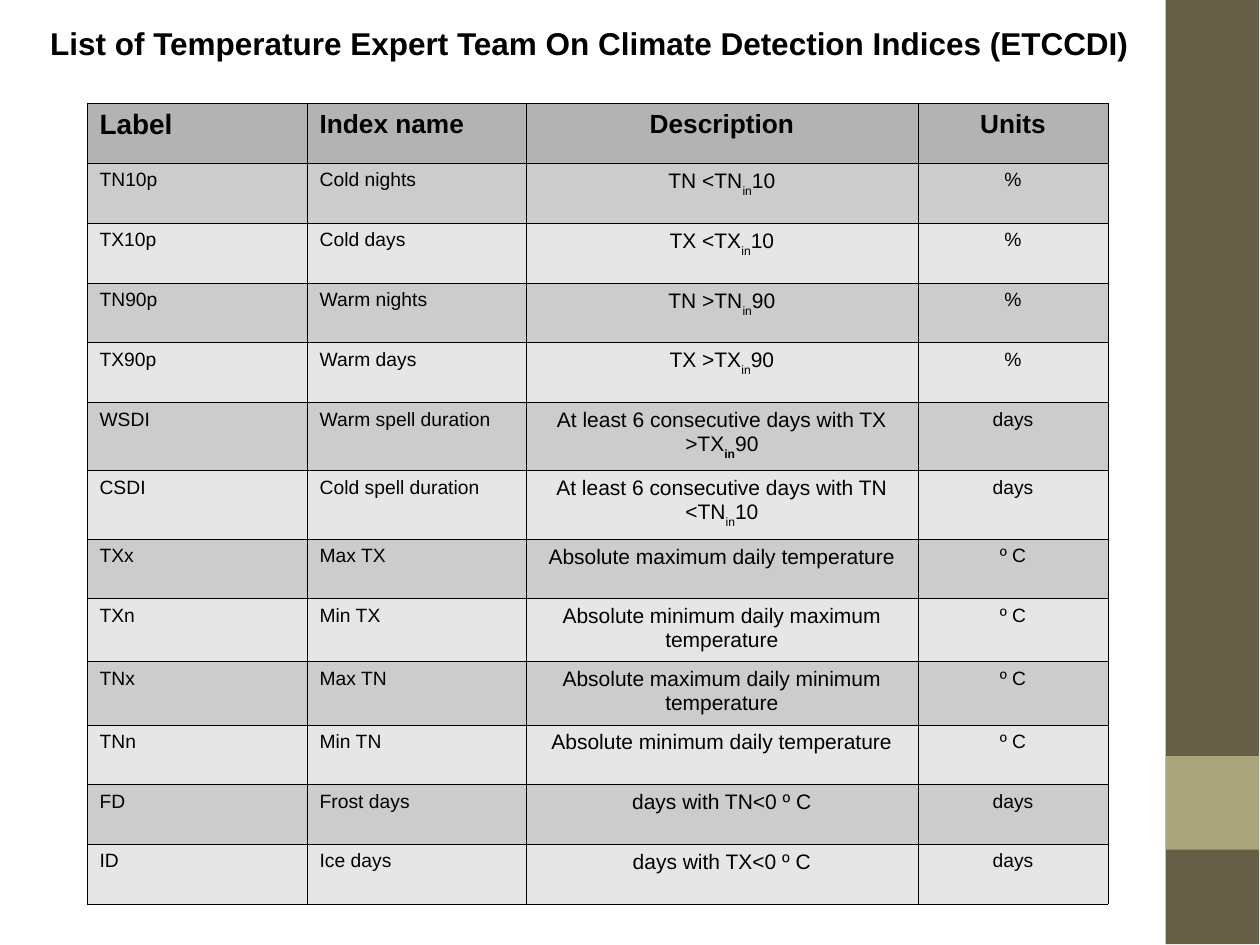
import pptx
import pptx.dml.color
import pptx.enum.shapes
import pptx.enum.text
import pptx.oxml
import pptx.oxml.ns
import pptx.util

Pt = pptx.util.Pt
ALIGN = pptx.enum.text.PP_ALIGN

TITLE = "List of Temperature Expert Team On Climate Detection Indices (ETCCDI)"
HEADER = ("Label", "Index name", "Description", "Units")
INDICES = [
    ("TN10p", "Cold nights", "TN <TN|in|10", "%"),
    ("ΤΧ10p", "Cold days", "TX <TX|in|10", "%"),
    ("TN90p", "Warm nights", "TN >TN|in|90", "%"),
    ("TX90p", "Warm days", "TX >TX|in|90", "%"),
    ("WSDI", "Warm spell duration", "At least 6 consecutive days with TX >TX|in|90", "days"),
    ("CSDI", "Cold spell duration", "At least 6 consecutive days with TN <TN|in|10", "days"),
    ("TXx", "Max TX", "Absolute maximum daily temperature", "º C"),
    ("TXn", "Min TX", "Absolute minimum daily maximum temperature", "º C"),
    ("TNx", "Max TN", "Absolute maximum daily minimum temperature", "º C"),
    ("TNn", "Min TN", "Absolute minimum daily temperature", "º C"),
    ("FD", "Frost days", "days with TN<0 º C", "days"),
    ("ID", "Ice days", "days with TX<0 º C", "days"),
]
BOLD_SUBSCRIPT = "WSDI"
COLUMN_WIDTHS = (125.8, 124.9, 224.3, 108.4)
COLUMN_ALIGN = (ALIGN.LEFT, ALIGN.LEFT, ALIGN.CENTER, ALIGN.CENTER)
HEADER_SIZES = (16, 15, 15, 15)
BODY_SIZES = (11, 11, 12, 11)
ROW_HEIGHT = 34.2
HEADER_FILL, BAND_FILLS = "B3B3B3", ("CCCCCC", "E6E6E6")
SIDE_BARS = [(0, 539.5, "675E47"), (432, 53.5, "A9A57C")]


def rgb(value):
    """Turn a hex string into a colour."""
    return pptx.dml.color.RGBColor.from_string(value)


def style_run(r, size, bold):
    """Set the font of one run."""
    r.font.name = "Arial"
    r.font.size = Pt(size)
    r.font.bold = bold
    r.font.color.rgb = rgb("000000")


def add_bar(s, top, height, fill):
    """Draw one block of the side band."""
    sp = s.shapes.add_shape(pptx.enum.shapes.MSO_SHAPE.RECTANGLE,
                            Pt(666), Pt(top), Pt(53.5), Pt(height))
    sp.shadow.inherit = False
    sp.fill.solid()
    sp.fill.fore_color.rgb = rgb(fill)
    sp.line.fill.background()


def add_borders(cell):
    """Give a cell thin black lines on all sides."""
    tcPr = cell._tc.get_or_add_tcPr()
    for side in ("lnL", "lnR", "lnT", "lnB"):
        tcPr.append(pptx.oxml.parse_xml(
            f'<a:{side} {pptx.oxml.ns.nsdecls("a")} w="{Pt(0.06)}"><a:solidFill>'
            f'<a:srgbClr val="000000"/></a:solidFill></a:{side}>'))


def fill_cell(cell, text, size, align, fill, bold, bold_sub):
    """Write a cell, with the middle of three parts as subscript."""
    add_borders(cell)
    cell.fill.solid()
    cell.fill.fore_color.rgb = rgb(fill)
    p = cell.text_frame.paragraphs[0]
    p.alignment = align
    for i, part in enumerate(text.split("|")):
        r = p.add_run()
        r.text = part
        style_run(r, size, bold or (i == 1 and bold_sub))
        if i == 1:
            r._r.get_or_add_rPr().set("baseline", "-33000")


def add_index_table(s):
    """Build the table of indices."""
    rows = [HEADER] + INDICES
    table = s.shapes.add_table(len(rows), len(HEADER), Pt(49.7), Pt(59),
                               Pt(sum(COLUMN_WIDTHS)), Pt(ROW_HEIGHT * len(rows))).table
    table.first_row = table.horz_banding = False
    for column, width in zip(table.columns, COLUMN_WIDTHS):
        column.width = Pt(width)
    for i, row in enumerate(rows):
        table.rows[i].height = Pt(ROW_HEIGHT)
        is_header = i == 0
        sizes = HEADER_SIZES if is_header else BODY_SIZES
        fill = HEADER_FILL if is_header else BAND_FILLS[(i - 1) % 2]
        for j, text in enumerate(row):
            fill_cell(table.cell(i, j), text, sizes[j], COLUMN_ALIGN[j], fill,
                      is_header, row[0] == BOLD_SUBSCRIPT)


def main():
    """Build and save the slide."""
    prs = pptx.Presentation()
    prs.slide_width, prs.slide_height = Pt(720), Pt(540)
    s = prs.slides.add_slide(prs.slide_layouts[6])
    for bar in SIDE_BARS:
        add_bar(s, *bar)
    tf = s.shapes.add_textbox(Pt(21.6), Pt(10), Pt(648), Pt(47.5)).text_frame
    tf.word_wrap = True
    tf.text = TITLE
    style_run(tf.paragraphs[0].runs[0], 18, True)
    add_index_table(s)
    prs.save("out.pptx")


if __name__ == "__main__":
    main()
